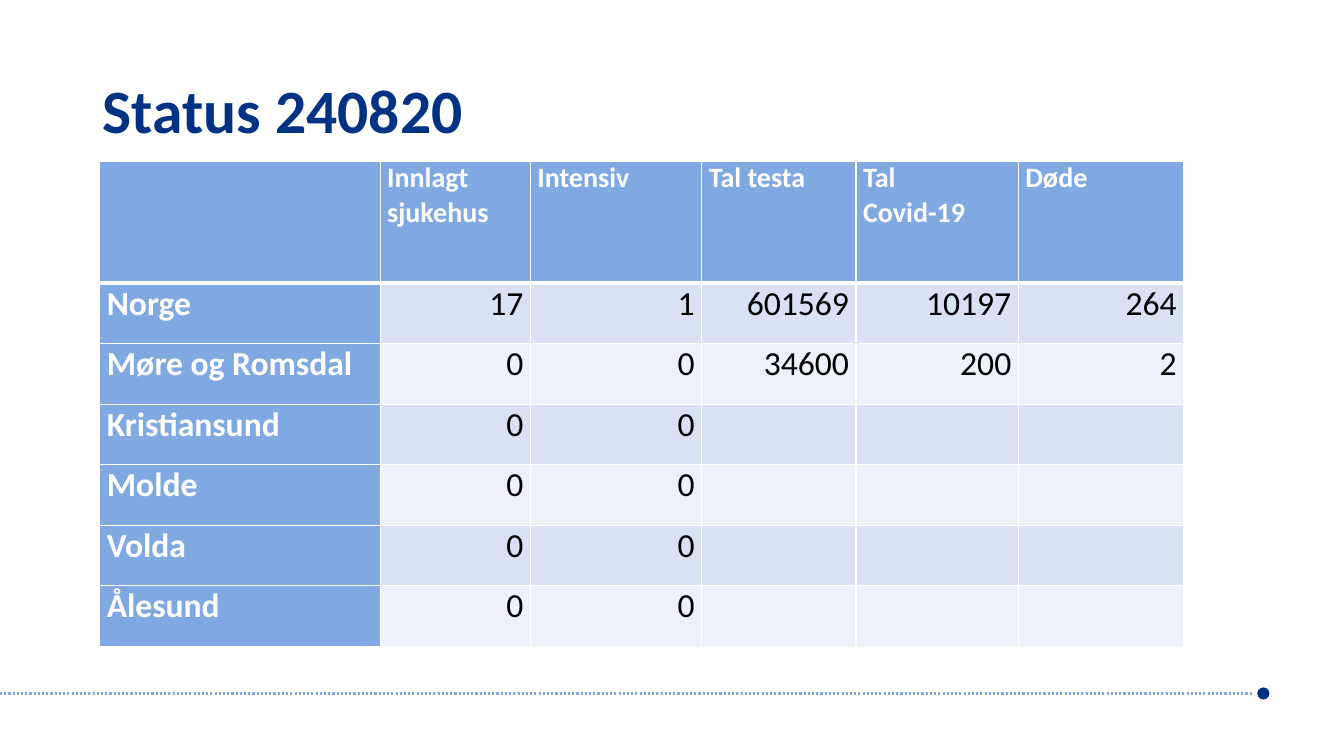
from dataclasses import dataclass

from lxml.etree import SubElement
from pptx import Presentation
from pptx.dml.color import RGBColor
from pptx.enum.dml import MSO_LINE_DASH_STYLE as Dash
from pptx.enum.shapes import MSO_CONNECTOR as Connector, MSO_SHAPE as Shape
from pptx.enum.text import MSO_ANCHOR as Anchor, MSO_AUTO_SIZE as AutoSize, PP_ALIGN as Align
from pptx.oxml.ns import qn
from pptx.util import Inches, Pt


@dataclass(frozen=True)
class Theme:
    font: str = "Calibri"
    navy: str = "003283"
    blue: str = "81A9E1"
    bands: tuple = ("D8E2F4", "EDF1F9")
    white: str = "FFFFFF"
    black: str = "000000"
    title_size: int = 44
    header_size: int = 20
    body_size: int = 24
    thin: float = 1
    thick: float = 3
    rule: float = 1.5


HEADERS = ["", "Innlagt sjukehus", "Intensiv", "Tal testa", "Tal\nCovid-19", "Døde"]
REGIONS = [
    ["Norge", "17", "1", "601569", "10197", "264"],
    ["Møre og Romsdal", "0", "0", "34600", "200", "2"],
    *[[town, "0", "0", "", "", ""] for town in ("Kristiansund", "Molde", "Volda", "Ålesund")],
]
COLUMN_WIDTHS = [2.78, 1.49, 1.7, 1.53, 1.61, 1.64]
ROW_HEIGHTS = [1.21] + [0.6] * len(REGIONS)


def color(code):
    return RGBColor.from_string(code)


def write(frame, text, *, font, size, fill, bold=False, align=Align.LEFT, spacing=None):
    for index, line in enumerate(text.split("\n")):
        para = frame.add_paragraph() if index else frame.paragraphs[0]
        para.alignment = align
        para.line_spacing = spacing
        span = para.add_run()
        span.text = line
        span.font.name = font
        span.font.size = Pt(size)
        span.font.bold = bold
        span.font.color.rgb = color(fill)


class StatusSlide:
    def __init__(self, deck, theme):
        self.theme = theme
        self.page = deck.slides.add_slide(deck.slide_layouts[5])
        background = self.page.background.fill
        background.solid()
        background.fore_color.rgb = color(theme.white)

    def dotted_line(self, left, right, y):
        line = self.page.shapes.add_connector(
            Connector.STRAIGHT, Inches(left), Inches(y), Inches(right), Inches(y))
        line.line.color.rgb = color(self.theme.blue)
        line.line.width = Pt(self.theme.rule)
        line.line.dash_style = Dash.ROUND_DOT
        SubElement(line._element.spPr, qn("a:effectLst"))

    def dot(self, left, top, size):
        dot = self.page.shapes.add_shape(
            Shape.OVAL, Inches(left), Inches(top), Inches(size), Inches(size))
        dot.shadow.inherit = False
        dot.fill.solid()
        dot.fill.fore_color.rgb = color(self.theme.navy)
        dot.line.fill.background()

    def title(self, text, left, top, width, height):
        box = self.page.shapes.title
        box.left, box.top = Inches(left), Inches(top)
        box.width, box.height = Inches(width), Inches(height)
        frame = box.text_frame
        frame.word_wrap = True
        frame.auto_size = AutoSize.NONE
        frame.vertical_anchor = Anchor.MIDDLE
        write(frame, text, font=self.theme.font, size=self.theme.title_size,
              fill=self.theme.navy, bold=True, spacing=0.9)

    def borders(self, cell, row):
        properties = cell._tc.get_or_add_tcPr()
        for side in "LRTB":
            header_edge = (row, side) in ((0, "B"), (1, "T"))
            width = self.theme.thick if header_edge else self.theme.thin
            edge = SubElement(properties, qn(f"a:ln{side}"), w=str(Pt(width)))
            paint = SubElement(edge, qn("a:solidFill"))
            SubElement(paint, qn("a:srgbClr"), val=self.theme.white)

    def cell(self, cell, text, row, column):
        theme = self.theme
        heading = row == 0 or column == 0
        self.borders(cell, row)
        cell.fill.solid()
        cell.fill.fore_color.rgb = color(theme.blue if heading else theme.bands[(row - 1) % 2])
        cell.margin_left = cell.margin_right = Inches(0.07)
        cell.margin_top = cell.margin_bottom = Inches(0)
        if text:
            write(cell.text_frame, text, font=theme.font, bold=heading,
                  size=theme.body_size if row else theme.header_size,
                  fill=theme.white if heading else theme.black,
                  align=Align.LEFT if heading else Align.RIGHT)

    def table(self, rows, widths, heights, left, top):
        table = self.page.shapes.add_table(
            len(rows), len(widths), Inches(left), Inches(top),
            Inches(sum(widths)), Inches(sum(heights))).table
        table.first_col = True
        for column, width in zip(table.columns, widths):
            column.width = Inches(width)
        for row, height in zip(table.rows, heights):
            row.height = Inches(height)
        for row, texts in enumerate(rows):
            for column, text in enumerate(texts):
                self.cell(table.cell(row, column), text, row, column)


def main():
    deck = Presentation()
    deck.slide_width, deck.slide_height = Inches(13.33), Inches(7.5)
    slide = StatusSlide(deck, Theme())
    slide.dotted_line(0, 12.42, 6.88)
    slide.dot(12.47, 6.82, 0.12)
    slide.title("Status 240820", 0.92, 0.4, 11.5, 1.45)
    slide.table([HEADERS, *REGIONS], COLUMN_WIDTHS, ROW_HEIGHTS, 0.99, 1.6)
    deck.save("out.pptx")


if __name__ == "__main__":
    main()
